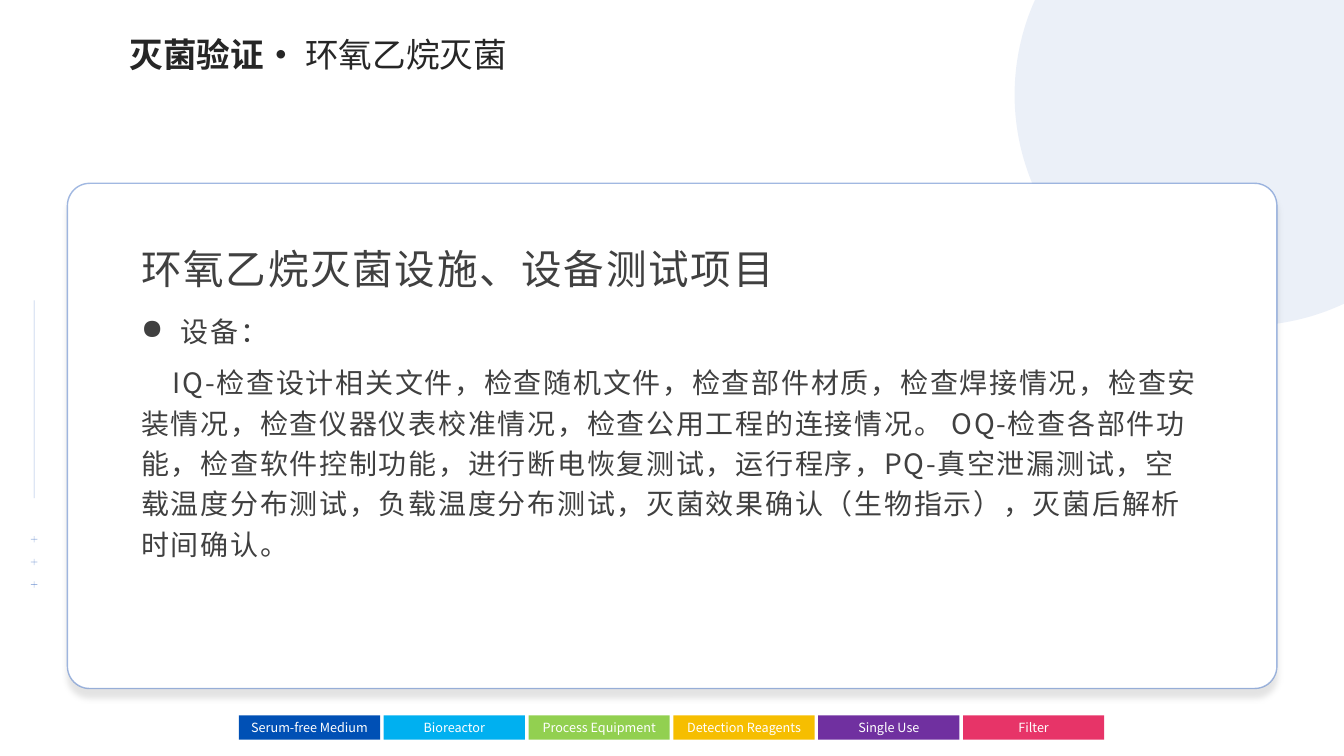
import math

from lxml import etree
from pptx import Presentation
from pptx import util as u
from pptx.dml.color import RGBColor
from pptx.enum import shapes, text
from pptx.oxml import ns

FONT = "Noto Sans CJK SC"
WHITE = RGBColor(0xFF, 0xFF, 0xFF)
BLUE = RGBColor(0x44, 0x72, 0xC4)
INK = RGBColor(0x26, 0x26, 0x26)
GREY = RGBColor(0x40, 0x40, 0x40)
CATEGORIES = [
    ("Serum-free Medium", RGBColor(0x00, 0x50, 0xB5)),
    ("Bioreactor", RGBColor(0x00, 0xB0, 0xF0)),
    ("Process Equipment", RGBColor(0x92, 0xD0, 0x50)),
    ("Detection Reagents", RGBColor(0xF6, 0xBE, 0x00)),
    ("Single Use", RGBColor(0x70, 0x30, 0xA0)),
    ("Filter", RGBColor(0xE7, 0x34, 0x68)),
]
BODY = (
    "IQ-检查设计相关文件，检查随机文件，检查部件材质，检查焊接情况，检查安装情况，"
    "检查仪器仪表校准情况，检查公用工程的连接情况。 OQ-检查各部件功能，检查软件控制功能，"
    "进行断电恢复测试，运行程序，PQ-真空泄漏测试，空载温度分布测试，负载温度分布测试，"
    "灭菌效果确认（生物指示），灭菌后解析时间确认。"
)


def add_child(parent, tag, **attributes):
    return etree.SubElement(parent, ns.qn(tag), attributes)


def set_alpha(fill, percent):
    color = fill._xPr.find(".//" + ns.qn("a:srgbClr"))
    add_child(color, "a:alpha", val=str(percent * 1000))


def style_run(run, size, color, bold=False, spacing=0):
    run.font.size = u.Pt(size)
    run.font.bold = bold
    run.font.color.rgb = color
    run.font.name = FONT
    properties = run._r.get_or_add_rPr()
    add_child(properties, "a:ea", typeface=FONT)
    if spacing:
        properties.set("spc", str(spacing))


def style_line(line, width):
    line.color.rgb = BLUE
    line.width = u.Pt(width)
    set_alpha(line.fill, 50)


def add_text_box(slide, left, top, width, height, margins=None):
    frame = slide.shapes.add_textbox(u.Cm(left), u.Cm(top), u.Cm(width), u.Cm(height)).text_frame
    frame.word_wrap = True
    if margins:
        frame.margin_left = frame.margin_right = u.Cm(margins[0])
        frame.margin_top = frame.margin_bottom = u.Cm(margins[1])
    return frame


def add_category(slide, index, label, color):
    shape = slide.shapes.add_shape(
        shapes.MSO_SHAPE.RECTANGLE,
        u.Cm(6.02 + index * 3.65), u.Cm(18.03), u.Cm(3.56), u.Cm(0.61))
    shape.shadow.inherit = False
    shape.fill.solid()
    shape.fill.fore_color.rgb = color
    shape.line.fill.background()
    frame = shape.text_frame
    frame.margin_left = frame.margin_right = frame.margin_top = frame.margin_bottom = 0
    frame.vertical_anchor = text.MSO_ANCHOR.MIDDLE
    frame.text = label
    paragraph = frame.paragraphs[0]
    paragraph.alignment = text.PP_ALIGN.CENTER
    style_run(paragraph.runs[0], 9, WHITE)


def add_corner_circle(slide, slide_width):
    center_x, center_y, radius = 31.39, 2.39, 5.82
    first = math.degrees(math.acos((slide_width - center_x) / radius))
    last = 180 + math.degrees(math.asin(center_y / radius))
    steps = 90
    points = [(slide_width, 0)]
    for step in range(steps + 1):
        angle = math.radians(first + (last - first) * step / steps)
        points.append((center_x + radius * math.cos(angle), center_y + radius * math.sin(angle)))
    points = [(u.Cm(x), u.Cm(y)) for x, y in points]
    builder = slide.shapes.build_freeform(*points[0])
    builder.add_line_segments(points[1:], close=True)
    shape = builder.convert_to_shape()
    shape.shadow.inherit = False
    shape.fill.solid()
    shape.fill.fore_color.rgb = BLUE
    set_alpha(shape.fill, 10)
    shape.line.fill.background()


def add_line(slide, x1, y1, x2, y2):
    connector = slide.shapes.add_connector(
        shapes.MSO_CONNECTOR.STRAIGHT, u.Cm(x1), u.Cm(y1), u.Cm(x2), u.Cm(y2))
    style_line(connector.line, 0.5)
    add_child(connector._element.spPr, "a:effectLst")


def add_side_marks(slide):
    x, arm = 0.86, 0.08
    add_line(slide, x, 7.57, x, 12.55)
    for index in range(3):
        y = 13.59 + index * 0.57
        add_line(slide, x, y - arm, x, y + arm)
        add_line(slide, x - arm, y, x + arm, y)


def add_card(slide):
    card = slide.shapes.add_shape(
        shapes.MSO_SHAPE.ROUNDED_RECTANGLE, u.Cm(1.7), u.Cm(4.62), u.Cm(30.48), u.Cm(12.73))
    card.adjustments[0] = 0.044
    card.fill.solid()
    card.fill.fore_color.rgb = WHITE
    style_line(card.line, 1)
    card.shadow.inherit = False
    effects = card._element.spPr.find(ns.qn("a:effectLst"))
    shadow = add_child(effects, "a:outerShdw", blurRad=str(u.Pt(4)), dist=str(u.Pt(6)),
                       dir="5400000", algn="t", rotWithShape="0")
    color = add_child(shadow, "a:srgbClr", val="000000")
    add_child(color, "a:alpha", val="11000")


def add_card_text(slide):
    margins = (0.18, 0.08)
    heading = add_text_box(slide, 3.38, 5.89, 27.1, 1.57, margins)
    heading.vertical_anchor = text.MSO_ANCHOR.BOTTOM
    heading.text = "环氧乙烷灭菌设施、设备测试项目"
    style_run(heading.paragraphs[0].runs[0], 29, GREY, spacing=120)

    body = add_text_box(slide, 3.38, 7.67, 27.1, 8.41, margins)
    body.text = "设备：\n" + BODY
    bullet, details = body.paragraphs
    properties = bullet._p.get_or_add_pPr()
    properties.set("marL", str(u.Cm(1)))
    properties.set("indent", str(u.Cm(-1)))
    add_child(properties, "a:buChar", char="●")
    details._p.get_or_add_pPr().set("indent", str(u.Cm(0.8)))
    for paragraph in body.paragraphs:
        paragraph.line_spacing = 1.2
        paragraph.space_after = u.Pt(8)
        style_run(paragraph.runs[0], 20, GREY, paragraph is bullet, 120)


def add_title(slide):
    frame = add_text_box(slide, 3.02, 0.74, 16.3, 1.27)
    paragraph = frame.paragraphs[0]
    for wording, bold in (("灭菌验证· ", True), ("环氧乙烷灭菌", False)):
        run = paragraph.add_run()
        run.text = wording
        style_run(run, 24, INK, bold)


def main():
    presentation = Presentation()
    slide_width = 33.87
    presentation.slide_width = u.Cm(slide_width)
    presentation.slide_height = u.Cm(19.05)
    slide = presentation.slides.add_slide(presentation.slide_layouts[6])
    for index, (label, color) in enumerate(CATEGORIES):
        add_category(slide, index, label, color)
    add_corner_circle(slide, slide_width)
    add_side_marks(slide)
    add_card(slide)
    add_card_text(slide)
    add_title(slide)
    presentation.save("out.pptx")


if __name__ == "__main__":
    main()
